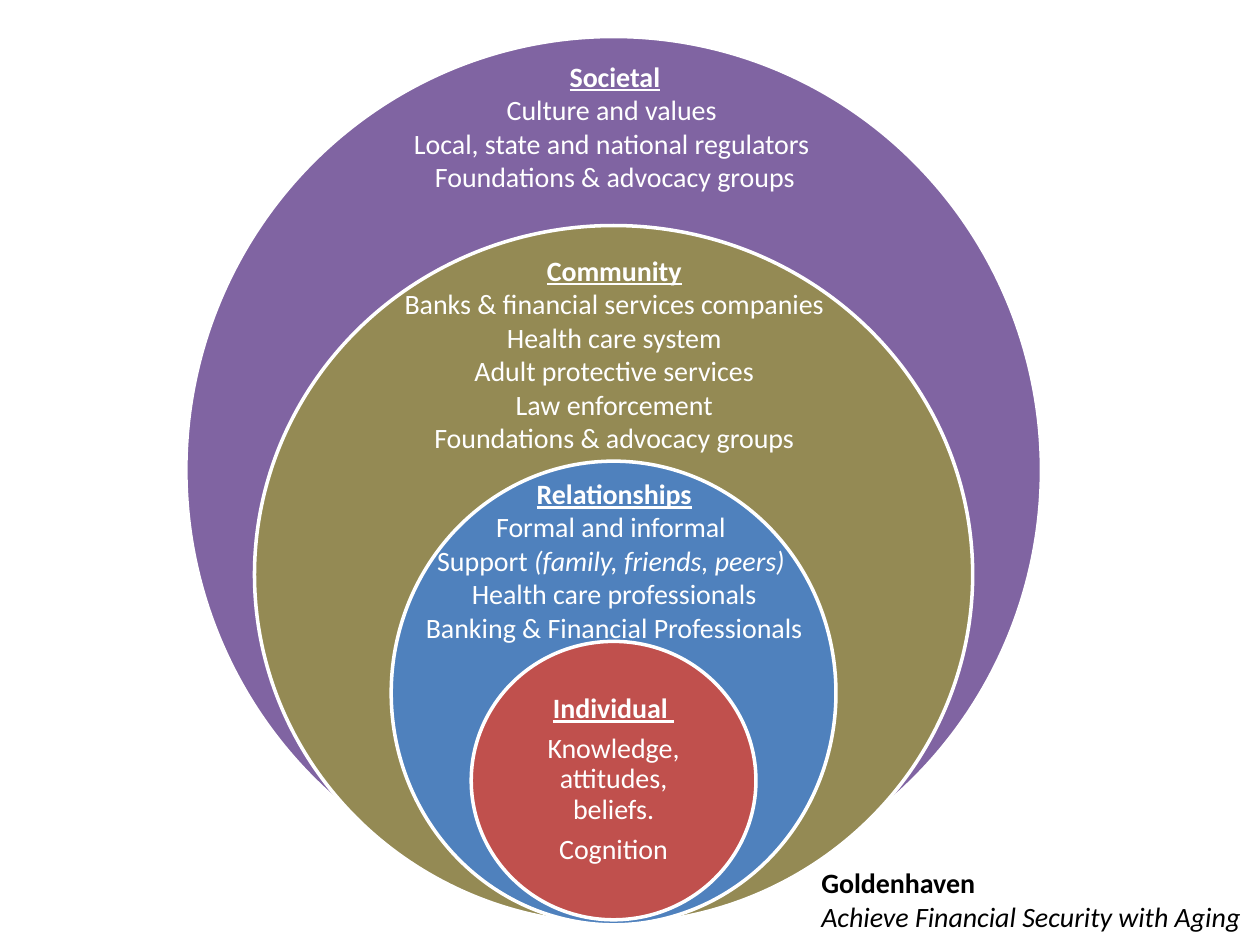
import pptx
import pptx.dml.color
import pptx.enum.shapes
import pptx.enum.text
import pptx.util

Inches = pptx.util.Inches
Pt = pptx.util.Pt
ALIGN = pptx.enum.text.PP_ALIGN
ANCHOR = pptx.enum.text.MSO_ANCHOR

COLORS = {
    "societal": "8064A2",
    "community": "948A54",
    "relationships": "4F81BD",
    "individual": "C0504D",
    "white": "FFFFFF",
    "black": "000000",
}
CENTER_X = 4.87

RINGS = [
    ("societal", 0.29, 6.79, 6.88),
    ("community", 1.79, 5.7, 5.54),
    ("relationships", 3.66, 3.53, 3.68),
    ("individual", 5.09, 2.26, 2.21),
]

LEVELS = [
    ((3, 1.96, 3.75, 1.96), "Community", [
        "Banks & financial services companies",
        "Health care system",
        "Adult protective services",
        "Law enforcement",
        "Foundations & advocacy groups",
    ]),
    ((2.92, 0.42, 3.92, 1.75), "Societal", [
        "Culture and values ",
        "Local, state and national regulators ",
        "Foundations & advocacy groups",
    ]),
    ((3.21, 3.73, 3.33, 1.35), "Relationships", [
        "Formal and informal ",
        ("Support ", "(family, friends, peers) "),
        "Health care professionals",
        "Banking & Financial Professionals",
    ]),
]


def rgb(name):
    return pptx.dml.color.RGBColor.from_string(COLORS[name])


def add_ring(page, color, top, width, height):
    ring = page.shapes.add_shape(
        pptx.enum.shapes.MSO_SHAPE.OVAL,
        Inches(CENTER_X - width / 2), Inches(top), Inches(width), Inches(height))
    ring.shadow.inherit = False
    ring.fill.solid()
    ring.fill.fore_color.rgb = rgb(color)
    ring.line.color.rgb = rgb("white")
    ring.line.width = Pt(2)


def add_box(page, bounds, anchor=ANCHOR.TOP, inset=None):
    box = page.shapes.add_textbox(*map(Inches, bounds))
    frame = box.text_frame
    frame.word_wrap = True
    frame.vertical_anchor = anchor
    if inset is not None:
        frame.margin_left = frame.margin_right = Inches(inset)
        frame.margin_top = frame.margin_bottom = Inches(inset)
    return frame


def add_span(para, text, color="white", bold=False, italic=False, underline=False):
    span = para.add_run()
    span.text = text
    span.font.name = "Calibri"
    span.font.size = Pt(16)
    span.font.color.rgb = rgb(color)
    span.font.bold = bold
    span.font.italic = italic
    span.font.underline = underline


def add_para(frame, text, align=ALIGN.CENTER, spacing=None, after=None, **style):
    first = frame.paragraphs[0]
    para = frame.add_paragraph() if first.runs else first
    para.alignment = align
    if spacing is not None:
        para.line_spacing = spacing
    if after is not None:
        para.space_after = Pt(after)
    add_span(para, text, **style)
    return para


def add_level(page, bounds, title, lines):
    frame = add_box(page, bounds)
    add_para(frame, title, bold=True, underline=True)
    for line in lines:
        if isinstance(line, tuple):
            plain, slanted = line
            add_span(add_para(frame, plain), slanted, italic=True)
        else:
            add_para(frame, line)


def add_individual(page):
    frame = add_box(page, (4.07, 5.64, 1.6, 1.1), anchor=ANCHOR.MIDDLE, inset=0.12)
    spaced = {"spacing": 0.9, "after": 5.6}
    add_para(frame, "Individual ", bold=True, underline=True, **spaced)
    for line in ("Knowledge, attitudes, beliefs.", "Cognition"):
        add_para(frame, line, **spaced)


def add_tagline(page):
    frame = add_box(page, (6.42, 6.82, 5.5, 0.65))
    add_para(frame, "Goldenhaven", align=ALIGN.LEFT, color="black", bold=True)
    add_para(frame, "Achieve Financial Security with Aging",
             align=ALIGN.LEFT, color="black", italic=True)


def main():
    deck = pptx.Presentation()
    deck.slide_width = Inches(10)
    deck.slide_height = Inches(7.5)
    page = deck.slides.add_slide(deck.slide_layouts[6])
    for ring in RINGS:
        add_ring(page, *ring)
    add_individual(page)
    for level in LEVELS:
        add_level(page, *level)
    add_tagline(page)
    deck.save("out.pptx")


if __name__ == "__main__":
    main()
